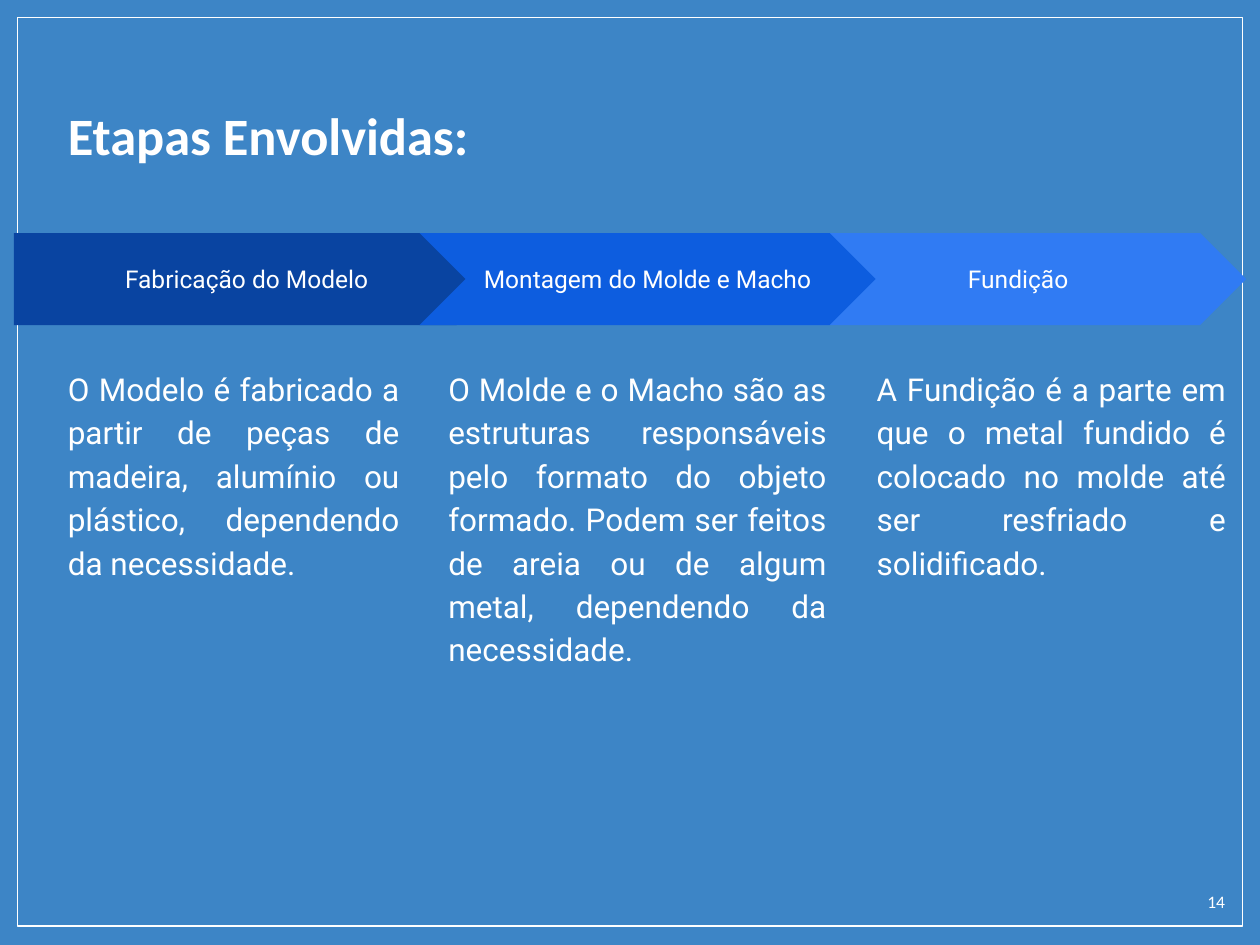
from pptx import Presentation
from pptx.dml.color import RGBColor
from pptx.enum.shapes import MSO_SHAPE as SHAPE
from pptx.enum.text import MSO_ANCHOR as ANCHOR, PP_ALIGN as ALIGN
from pptx.util import Inches, Pt

WHITE = "FFFFFF"
ARROW_TOP, ARROW_HEIGHT = 1.85, 0.73
BODY_TOP, BODY_HEIGHT = 2.79, 2.86

STEPS = [
    ("Fundição", SHAPE.CHEVRON, 6.27, 3.62, "307BF3", 6.86, 2.97,
     "A Fundição é a parte em que o metal fundido é colocado no molde até "
     "ser resfriado e solidificado."),
    ("Fabricação do Modelo", SHAPE.PENTAGON, 0.11, 3.88, "0944A1", 0.44, 2.83,
     "O Modelo é fabricado a partir de peças de madeira, alumínio ou "
     "plástico, dependendo da necessidade."),
    ("Montagem do Molde e Macho", SHAPE.CHEVRON, 3.33, 3.62, "0D5DDF", 3.46, 3.2,
     "O Molde e o Macho são as estruturas responsáveis pelo formato do objeto "
     "formado. Podem ser feitos de areia ou de algum metal, dependendo da "
     "necessidade."),
]


def rgb(color):
    """Turn a hex string into a colour."""
    return RGBColor.from_string(color)


def write(sp, text, size, font, align=ALIGN.LEFT, anchor=ANCHOR.TOP,
          bold=False, spacing=None):
    """Put one formatted white paragraph into a shape."""
    tf = sp.text_frame
    tf.word_wrap = True
    tf.vertical_anchor = anchor
    tf.margin_left = tf.margin_right = Inches(0.1)
    tf.margin_top = tf.margin_bottom = Inches(0.1)
    tf.text = text
    p = tf.paragraphs[0]
    p.alignment = align
    p.line_spacing = spacing
    r = p.runs[0]
    r.font.size = Pt(size)
    r.font.name = font
    r.font.bold = bold
    r.font.color.rgb = rgb(WHITE)


def add_text(s, x, y, w, h, text, size, font, **style):
    """Add a text box with one paragraph."""
    sp = s.shapes.add_textbox(Inches(x), Inches(y), Inches(w), Inches(h))
    write(sp, text, size, font, **style)


def add_frame(s):
    """Add the thin white border around the slide."""
    sp = s.shapes.add_shape(SHAPE.RECTANGLE, Inches(0.14), Inches(0.14),
                            Inches(9.72), Inches(7.21))
    sp.shadow.inherit = False
    sp.fill.background()
    sp.line.color.rgb = rgb(WHITE)
    sp.line.width = Pt(0.75)


def add_arrow(s, kind, x, w, color, label):
    """Add a labelled arrow of the process band."""
    sp = s.shapes.add_shape(kind, Inches(x), Inches(ARROW_TOP),
                            Inches(w), Inches(ARROW_HEIGHT))
    sp.shadow.inherit = False
    sp.fill.solid()
    sp.fill.fore_color.rgb = rgb(color)
    sp.line.fill.background()
    write(sp, label, 14, "Roboto", align=ALIGN.CENTER, anchor=ANCHOR.MIDDLE)


def main():
    """Build the slide and save it."""
    prs = Presentation()
    prs.slide_width, prs.slide_height = Inches(10), Inches(7.5)
    s = prs.slides.add_slide(prs.slide_layouts[6])
    s.background.fill.solid()
    s.background.fill.fore_color.rgb = rgb("3D85C6")

    add_frame(s)
    add_text(s, 0.44, 0.72, 9, 0.6, "Etapas Envolvidas:", 30, "Calibri", bold=True)
    add_text(s, 9.32, 6.99, 0.5, 0.43, "14", 10, "Calibri", align=ALIGN.RIGHT)
    for label, kind, x, w, color, body_x, body_w, body in STEPS:
        add_arrow(s, kind, x, w, color, label)
        add_text(s, body_x, BODY_TOP, body_w, BODY_HEIGHT, body, 18, "Roboto",
                 align=ALIGN.JUSTIFY, spacing=1.15)

    prs.save("out.pptx")


if __name__ == "__main__":
    main()
